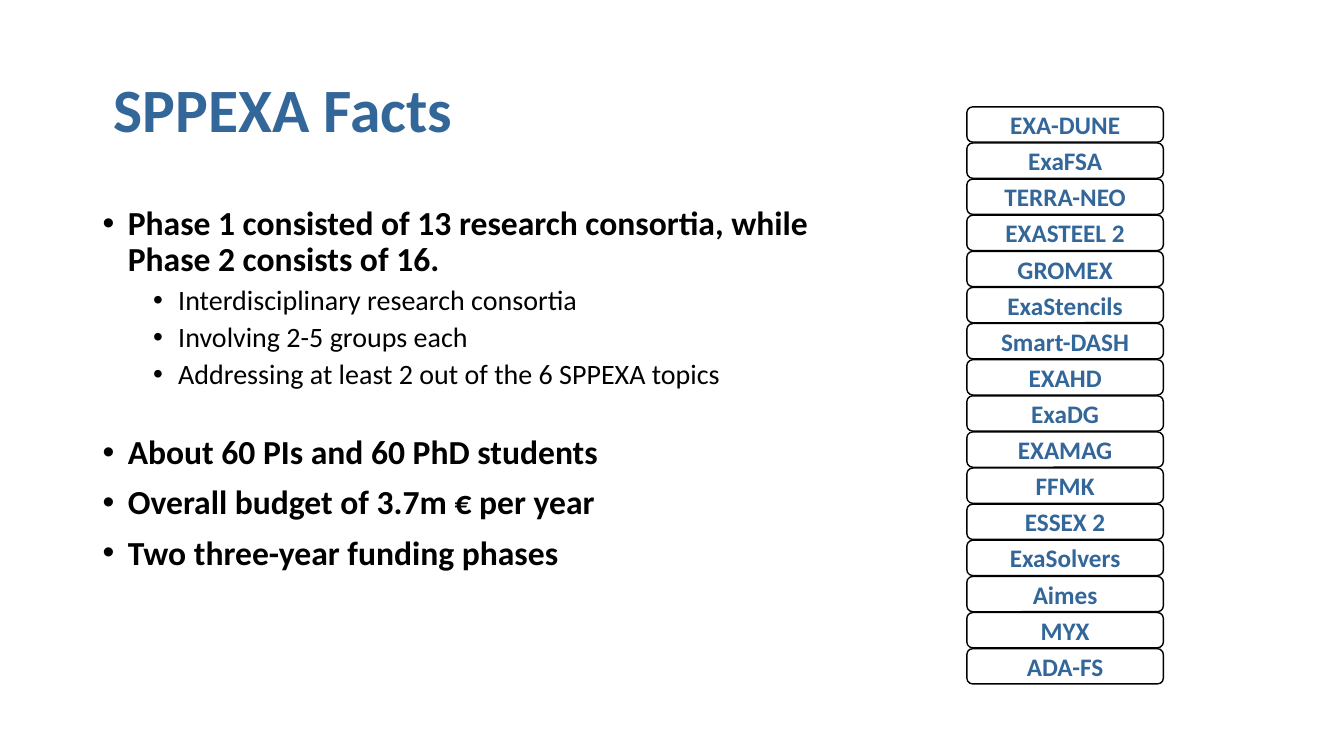
from dataclasses import dataclass

from lxml.etree import SubElement
from pptx import Presentation
from pptx.dml.color import RGBColor
from pptx.enum.shapes import MSO_SHAPE
from pptx.enum.text import MSO_ANCHOR, PP_ALIGN
from pptx.oxml.ns import qn
from pptx.slide import Slide
from pptx.text.text import TextFrame, _Paragraph
from pptx.util import Emu, Inches, Pt


@dataclass(frozen=True)
class Theme:
    font: str = "Calibri"
    accent: RGBColor = RGBColor(0x33, 0x66, 0x99)
    ink: RGBColor = RGBColor(0, 0, 0)
    paper: RGBColor = RGBColor(255, 255, 255)
    title_size: int = 44
    fact_size: int = 24
    detail_size: int = 20
    consortium_size: int = 18
    line_spacing: float = 0.9


@dataclass(frozen=True)
class Area:
    """A rectangle in grid columns and rows."""
    column: float
    row: float
    columns: float
    rows: float

    def place(self, shape) -> None:
        shape.left, shape.top, shape.width, shape.height = self.lengths()

    def lengths(self) -> tuple[Emu, ...]:
        return tuple(Emu(round(cells * CELL))
                     for cells in (self.column, self.row, self.columns, self.rows))


@dataclass(frozen=True)
class Fact:
    text: str
    level: int = 0
    space_before: int = 10


THEME = Theme()
GRID_COLUMNS, GRID_ROWS = 160, 90
CELL = Inches(7.5) / GRID_ROWS
TITLE_AREA = Area(12.36, 4.68, 138, 17.4)
FACTS_AREA = Area(11.04, 24, 138, 57.12)
FIRST_CONSORTIUM = Area(115.1, 12.72, 23.4, 4.2)
CONSORTIUM_PITCH = 4.3

FACTS = (
    Fact("Phase 1 consisted of 13 research consortia, while\nPhase 2 consists of 16."),
    Fact("Interdisciplinary research consortia", level=1, space_before=5),
    Fact("Involving 2-5 groups each", level=1, space_before=5),
    Fact("Addressing at least 2 out of the 6 SPPEXA topics", level=1, space_before=5),
    Fact("About 60 PIs and 60 PhD students", space_before=32),
    Fact("Overall budget of 3.7m € per year"),
    Fact("Two three-year funding phases"),
)
CONSORTIA = (
    "EXA-DUNE", "ExaFSA", "TERRA-NEO", "EXASTEEL 2", "GROMEX", "ExaStencils",
    "Smart-DASH", "EXAHD", "ExaDG", "EXAMAG", "FFMK", "ESSEX 2", "ExaSolvers",
    "Aimes", "MYX", "ADA-FS",
)


def write(paragraph: _Paragraph, text: str, *, size: int, color: RGBColor,
          bold: bool = True, align: PP_ALIGN = PP_ALIGN.LEFT,
          line_spacing: float = 1.0, space_before: int = 0) -> None:
    paragraph.alignment = align
    paragraph.line_spacing = line_spacing
    paragraph.space_before = Pt(space_before)
    for index, line in enumerate(text.split("\n")):
        if index:
            paragraph.add_line_break()
        run = paragraph.add_run()
        run.text = line
        run.font.name = THEME.font
        run.font.size = Pt(size)
        run.font.bold = bold
        run.font.color.rgb = color


def add_bullet(paragraph: _Paragraph, level: int) -> None:
    paragraph.level = level
    properties = paragraph._p.get_or_add_pPr()
    properties.set("marL", str(Inches(0.25 + 0.5 * level)))
    properties.set("indent", str(Inches(-0.25)))
    SubElement(properties, qn("a:buFont"), typeface="Arial")
    SubElement(properties, qn("a:buChar"), char="•")


def add_title(slide: Slide, text: str) -> None:
    title = slide.shapes.title
    TITLE_AREA.place(title)
    title.text_frame.vertical_anchor = MSO_ANCHOR.MIDDLE
    write(title.text_frame.paragraphs[0], text, size=THEME.title_size,
          color=THEME.accent, line_spacing=THEME.line_spacing)


def fill_facts(frame: TextFrame) -> None:
    frame.word_wrap = True
    for index, fact in enumerate(FACTS):
        paragraph = frame.add_paragraph() if index else frame.paragraphs[0]
        is_main = fact.level == 0
        write(paragraph, fact.text, bold=is_main, color=THEME.ink,
              size=THEME.fact_size if is_main else THEME.detail_size,
              line_spacing=THEME.line_spacing, space_before=fact.space_before)
        add_bullet(paragraph, fact.level)


def add_consortium(slide: Slide, name: str, area: Area) -> None:
    box = slide.shapes.add_shape(MSO_SHAPE.ROUNDED_RECTANGLE, *area.lengths())
    box.shadow.inherit = False
    box.fill.solid()
    box.fill.fore_color.rgb = THEME.paper
    box.line.color.rgb = THEME.ink
    box.line.width = Pt(1)
    box.text_frame.vertical_anchor = MSO_ANCHOR.MIDDLE
    write(box.text_frame.paragraphs[0], name, size=THEME.consortium_size,
          color=THEME.accent, align=PP_ALIGN.CENTER)


def main() -> None:
    presentation = Presentation()
    presentation.slide_width = Emu(round(GRID_COLUMNS * CELL))
    presentation.slide_height = Emu(round(GRID_ROWS * CELL))
    slide = presentation.slides.add_slide(presentation.slide_layouts.get_by_name("Title Only"))
    add_title(slide, "SPPEXA Facts")
    fill_facts(slide.shapes.add_textbox(*FACTS_AREA.lengths()).text_frame)
    first = FIRST_CONSORTIUM
    for index, name in enumerate(CONSORTIA):
        row = first.row + index * CONSORTIUM_PITCH
        add_consortium(slide, name, Area(first.column, row, first.columns, first.rows))
    presentation.save("out.pptx")


if __name__ == "__main__":
    main()
